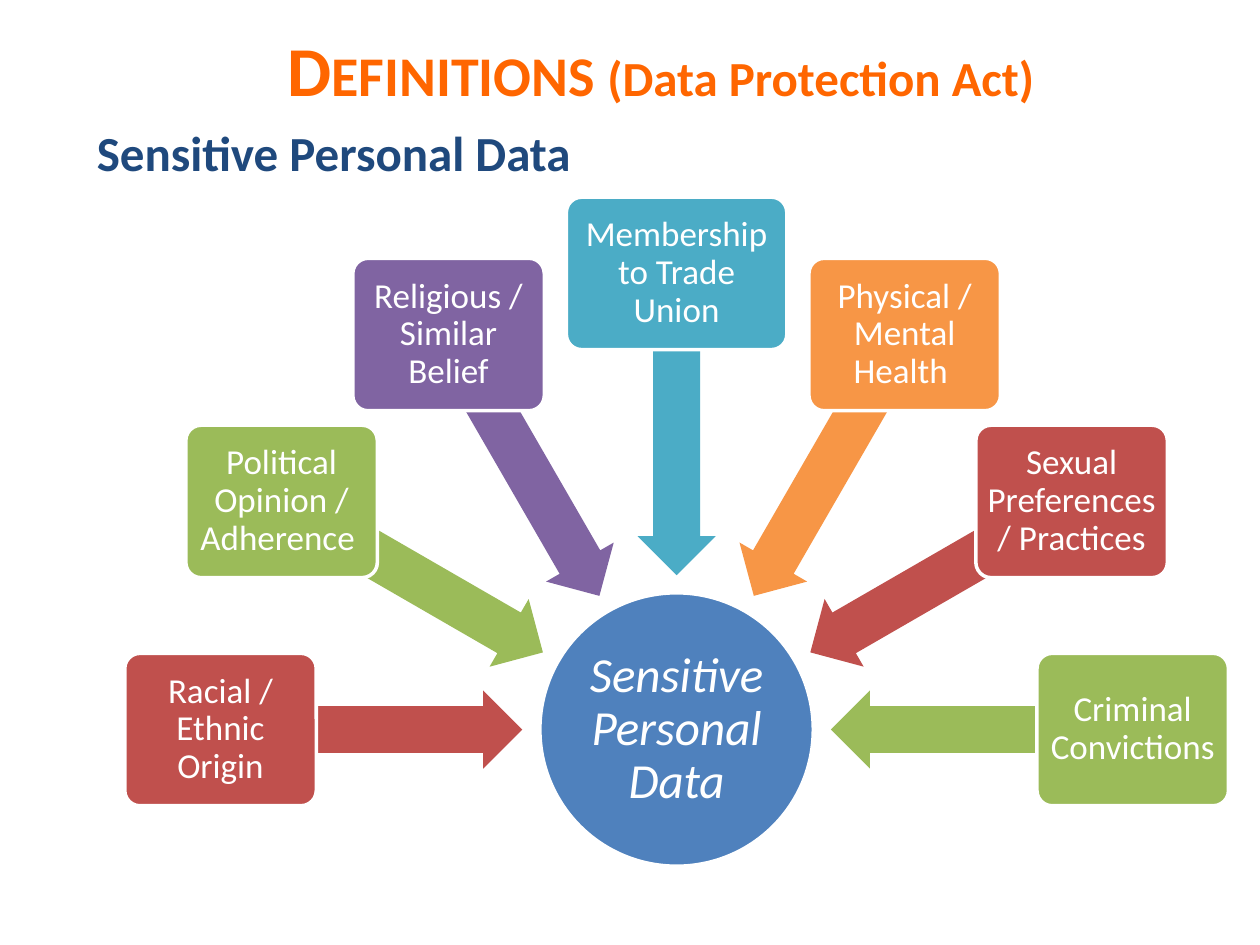
"""Build a slide of seven kinds of sensitive personal data around a hub."""
from math import cos, radians, sin

from pptx import Presentation
from pptx.dml.color import RGBColor
from pptx.enum.shapes import MSO_SHAPE as Shape
from pptx.enum.text import MSO_ANCHOR as Anchor, PP_ALIGN as Align
from pptx.util import Inches, Pt

WHITE = RGBColor(0xFF, 0xFF, 0xFF)
TITLE_ORANGE = RGBColor(0xFF, 0x66, 0x00)
NAVY = RGBColor(0x1F, 0x49, 0x7D)
BLUE = RGBColor(0x4F, 0x81, 0xBD)
RED = RGBColor(0xC0, 0x50, 0x4D)
GREEN = RGBColor(0x9B, 0xBB, 0x59)
PURPLE = RGBColor(0x80, 0x64, 0xA2)
TEAL = RGBColor(0x4B, 0xAC, 0xC6)
ORANGE = RGBColor(0xF7, 0x96, 0x46)

HUB_X, HUB_Y, HUB_SIZE = 5.37, 5.79, 2.17
ARROW_RADIUS, ARROW_WIDTH, ARROW_HEIGHT = 2.42, 2.39, 0.62
BOX_RADIUS, BOX_WIDTH, BOX_HEIGHT = 3.62, 1.52, 1.21
FIRST_ANGLE, ANGLE_STEP = 180, 30

CATEGORIES = [
    ("Racial / Ethnic Origin", RED, BOX_WIDTH),
    ("Political Opinion / Adherence ", GREEN, BOX_WIDTH),
    ("Religious / Similar Belief", PURPLE, BOX_WIDTH),
    ("Membership to Trade Union", TEAL, 1.75),
    ("Physical / Mental Health ", ORANGE, BOX_WIDTH),
    ("Sexual Preferences / Practices", RED, BOX_WIDTH),
    ("Criminal Convictions", GREEN, BOX_WIDTH),
]


def add_span(para, text, size, color, bold=False, italic=False, small_caps=False):
    """Append formatted text to a paragraph."""
    span = para.add_run()
    span.text = text
    font = span.font
    font.name, font.size = "Calibri", Pt(size)
    font.bold, font.italic = bold, italic
    font.color.rgb = color
    if small_caps:
        span._r.get_or_add_rPr().set("cap", "small")


def add_text_box(page, left, top, width, height, align, anchor):
    """Add a wrapping text box and return its first paragraph."""
    box = page.shapes.add_textbox(
        Inches(left), Inches(top), Inches(width), Inches(height))
    frame = box.text_frame
    frame.word_wrap = True
    frame.vertical_anchor = anchor
    para = frame.paragraphs[0]
    para.alignment = align
    return para


def add_centred_shape(page, kind, center, width, height, fill, outlined=True):
    """Add a flat shape around a centre point."""
    x, y = center
    shape = page.shapes.add_shape(
        kind, Inches(x - width / 2), Inches(y - height / 2),
        Inches(width), Inches(height))
    shape.shadow.inherit = False
    shape.fill.solid()
    shape.fill.fore_color.rgb = fill
    if outlined:
        shape.line.color.rgb = WHITE
        shape.line.width = Pt(2)
    else:
        shape.line.fill.background()
    return shape


def add_label(shape, text, inset, **style):
    """Write centred white text in a shape."""
    frame = shape.text_frame
    frame.word_wrap = True
    frame.vertical_anchor = Anchor.MIDDLE
    frame.margin_left = frame.margin_right = Inches(inset)
    frame.margin_top = frame.margin_bottom = Inches(inset)
    para = frame.paragraphs[0]
    para.alignment = Align.CENTER
    para.line_spacing = 0.9
    add_span(para, text, color=WHITE, **style)


def point_around_hub(radius, angle):
    """Return the point at a clockwise angle and distance from the hub."""
    turn = radians(angle)
    return HUB_X + radius * cos(turn), HUB_Y + radius * sin(turn)


def add_category(page, angle, text, color, width):
    """Add a category box with its arrow towards the hub."""
    arrow = add_centred_shape(
        page, Shape.LEFT_ARROW, point_around_hub(ARROW_RADIUS, angle),
        ARROW_WIDTH, ARROW_HEIGHT, color, outlined=False)
    arrow.adjustments[0] = 0.6
    arrow.adjustments[1] = 0.5
    arrow.rotation = angle
    box = add_centred_shape(
        page, Shape.ROUNDED_RECTANGLE, point_around_hub(BOX_RADIUS, angle),
        width, BOX_HEIGHT, color)
    box.adjustments[0] = 0.1
    add_label(box, text, inset=0.04, size=20)


def main():
    """Build and save the deck."""
    deck = Presentation()
    deck.slide_width, deck.slide_height = Inches(10), Inches(7.5)
    page = deck.slides.add_slide(deck.slide_layouts[6])

    title = add_text_box(page, 0.83, 0.17, 8.83, 0.75, Align.CENTER, Anchor.MIDDLE)
    add_span(title, "Definitions ", 40, TITLE_ORANGE, bold=True, small_caps=True)
    add_span(title, "(Data Protection Act)", 28, TITLE_ORANGE, bold=True)

    hub = add_centred_shape(
        page, Shape.OVAL, (HUB_X, HUB_Y), HUB_SIZE, HUB_SIZE, BLUE)
    add_label(hub, "Sensitive Personal Data", inset=0.02, size=28, italic=True)
    for index, category in enumerate(CATEGORIES):
        add_category(page, FIRST_ANGLE + index * ANGLE_STEP, *category)

    heading = add_text_box(page, 0.67, 0.92, 4.67, 0.57, Align.LEFT, Anchor.TOP)
    add_span(heading, "Sensitive Personal Data", 28, NAVY, bold=True)
    deck.save("out.pptx")


if __name__ == "__main__":
    main()
